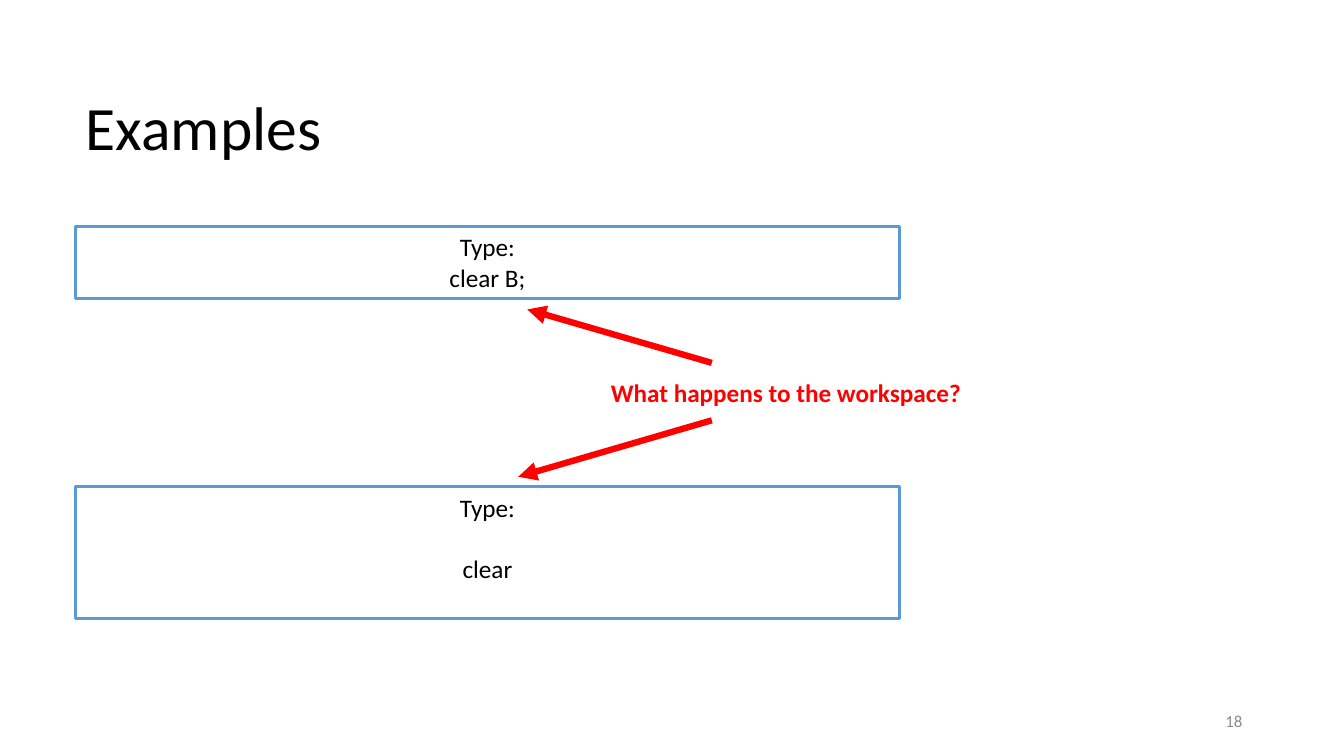
from lxml.etree import SubElement
from pptx import Presentation
from pptx.dml.color import RGBColor
from pptx.enum.shapes import MSO_CONNECTOR, MSO_SHAPE
from pptx.enum.text import MSO_ANCHOR, PP_ALIGN
from pptx.oxml.ns import qn
from pptx.util import Pt

PX = 9144  # EMU per px, 100 px to the inch
FONT = "Calibri"
BLACK, WHITE, BLUE, RED, GREY = "000000", "FFFFFF", "5B9BD5", "FF0000", "8C8C8C"


def rgb(color):
    return RGBColor.from_string(color)


def emu(*lengths):
    return [n * PX for n in lengths]


def add_run(p, text, size, color, bold=False):
    r = p.add_run()
    r.text = text
    r.font.name = FONT
    r.font.size = Pt(size)
    r.font.bold = bold
    r.font.color.rgb = rgb(color)


def set_title(s, text, *box):
    sp = s.shapes.title
    sp.left, sp.top, sp.width, sp.height = emu(*box)
    tf = sp.text_frame
    tf.vertical_anchor = MSO_ANCHOR.MIDDLE
    p = tf.paragraphs[0]
    p.alignment = PP_ALIGN.LEFT
    p.line_spacing = 0.9
    add_run(p, text, 44, BLACK)


def add_label(s, text, box, size, color, bold=False,
              align=PP_ALIGN.LEFT, anchor=MSO_ANCHOR.TOP):
    tf = s.shapes.add_textbox(*emu(*box)).text_frame
    tf.word_wrap = True
    tf.vertical_anchor = anchor
    p = tf.paragraphs[0]
    p.alignment = align
    add_run(p, text, size, color, bold)


def add_command_box(s, command, top, height, gap=0):
    sp = s.shapes.add_shape(MSO_SHAPE.RECTANGLE, *emu(75, top, 817, height))
    sp.shadow.inherit = False
    sp.fill.solid()
    sp.fill.fore_color.rgb = rgb(WHITE)
    sp.line.color.rgb = rgb(BLUE)
    sp.line.width = Pt(2.25)
    tf = sp.text_frame
    tf.word_wrap = True
    tf.vertical_anchor = MSO_ANCHOR.TOP
    prompt, answer = tf.paragraphs[0], tf.add_paragraph()
    answer.space_before = Pt(gap)
    for p, text in ((prompt, "Type:"), (answer, command)):
        p.alignment = PP_ALIGN.CENTER
        add_run(p, text, 18, BLACK)


def add_arrow(s, *ends):
    cxn = s.shapes.add_connector(MSO_CONNECTOR.STRAIGHT, *emu(*ends))
    cxn.line.color.rgb = rgb(RED)
    cxn.line.width = Pt(4.5)
    SubElement(cxn.line._get_or_add_ln(), qn("a:tailEnd"), type="triangle")
    SubElement(cxn._element.spPr, qn("a:effectLst"))


def main():
    prs = Presentation()
    prs.slide_width, prs.slide_height = emu(1333, 750)
    s = prs.slides.add_slide(prs.slide_layouts[5])

    # Title and slide number
    set_title(s, "Examples", 75, 67, 850, 125)
    add_label(s, "18", (942, 695, 300, 40), 12, GREY,
              align=PP_ALIGN.RIGHT, anchor=MSO_ANCHOR.MIDDLE)

    # Commands to type
    add_command_box(s, "clear B;", 225, 71)
    add_command_box(s, "clear", 483, 131, gap=22)

    # Question pointing at both commands
    add_label(s, "What happens to the workspace?", (596, 369, 385, 40),
              18, RED, bold=True)
    add_arrow(s, 706, 360, 523, 307)
    add_arrow(s, 706, 417, 514, 473)

    prs.save("out.pptx")


if __name__ == "__main__":
    main()
